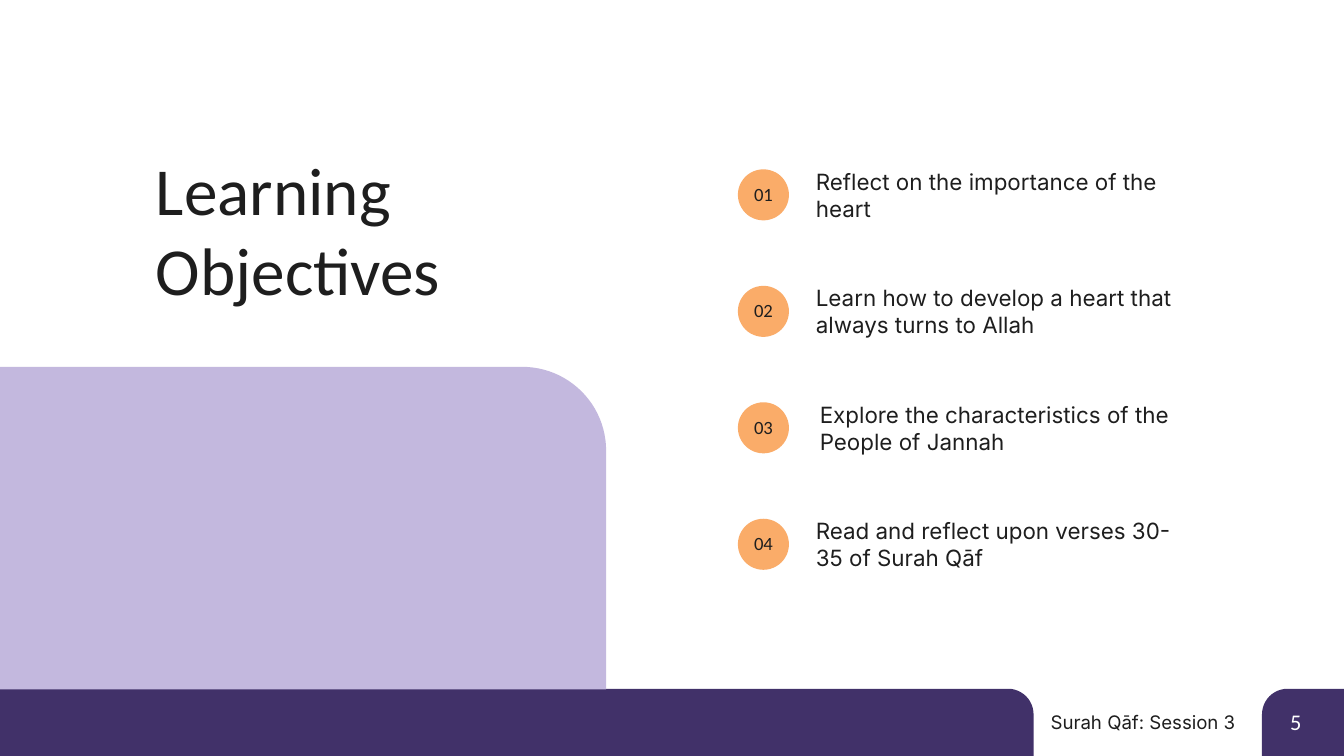
import pptx
import pptx.util
import pptx.dml.color
import pptx.enum.shapes
import pptx.enum.text

Inches = pptx.util.Inches
RGBColor = pptx.dml.color.RGBColor
MSO_SHAPE = pptx.enum.shapes.MSO_SHAPE
PP_ALIGN = pptx.enum.text.PP_ALIGN

# Content
TITLE = "Learning\nObjectives"
FOOTER = "Surah Qāf: Session 3"
PAGE_NUMBER = "5"
# Objective text, left, width
OBJECTIVES = [
    ("Reflect on the importance of the heart", 6.02, 2.85),
    ("Learn how to develop a heart that always turns to Allah", 6.02, 2.85),
    ("Explore the characteristics of the People of Jannah", 6.05, 2.8),
    ("Read and reflect upon verses 30-35 of Surah Qāf", 6.02, 2.85),
]

# Style
DARK_PURPLE = RGBColor(0x41, 0x31, 0x69)
LILAC = RGBColor(0xC3, 0xB8, 0xDE)
ORANGE = RGBColor(0xFA, 0xAC, 0x69)
INK = RGBColor(0x1E, 0x1E, 0x1E)
WHITE = RGBColor(0xFF, 0xFF, 0xFF)
HEADING_FONT = "Calibri"
BODY_FONT = "Inter"

# Layout: a 16:9 slide, with the footer bar along its bottom edge
SLIDE_WIDTH = 10
SLIDE_HEIGHT = SLIDE_WIDTH * 9 / 16
BAR_HEIGHT, BAR_ROUNDING = 0.5, 0.38
BAR_TOP = SLIDE_HEIGHT - BAR_HEIGHT
BADGE_LEFT, BADGE_SIZE = 5.49, 0.38
FIRST_BADGE_TOP, LAST_BADGE_TOP = 1.26, 3.86
ROW_PITCH = (LAST_BADGE_TOP - FIRST_BADGE_TOP) / (len(OBJECTIVES) - 1)


def add_filled_shape(slide, kind, box, color, rounding=None):
    shape = slide.shapes.add_shape(kind, *map(Inches, box))
    shape.shadow.inherit = False
    shape.fill.solid()
    shape.fill.fore_color.rgb = color
    shape.line.fill.background()
    if rounding is not None:
        shape.adjustments[0] = rounding
    return shape


def write_text(shape, text, size, font, color=INK, alignment=PP_ALIGN.LEFT):
    frame = shape.text_frame
    frame.text = text
    frame.word_wrap = True
    frame.auto_size = pptx.enum.text.MSO_AUTO_SIZE.NONE
    frame.vertical_anchor = pptx.enum.text.MSO_ANCHOR.TOP
    frame.margin_left = frame.margin_right = Inches(0.05)
    frame.margin_top = frame.margin_bottom = Inches(0.02)
    for paragraph in frame.paragraphs:
        paragraph.alignment = alignment
        paragraph.line_spacing = 1.0
        for run in paragraph.runs:
            run.font.size = pptx.util.Pt(size)
            run.font.name = font
            run.font.color.rgb = color


def add_text(slide, box, *text_style, **options):
    write_text(slide.shapes.add_textbox(*map(Inches, box)), *text_style, **options)


presentation = pptx.Presentation()
presentation.slide_width = Inches(SLIDE_WIDTH)
presentation.slide_height = Inches(SLIDE_HEIGHT)
slide = presentation.slides.add_slide(presentation.slide_layouts[5])

# Footer bars and lilac panel
corner = MSO_SHAPE.ROUND_1_RECTANGLE
page_tab = add_filled_shape(slide, corner, (9.39, BAR_TOP, 0.61, BAR_HEIGHT),
                            DARK_PURPLE, BAR_ROUNDING)
page_tab._element.spPr.xfrm.set("flipH", "1")
add_filled_shape(slide, corner, (0, BAR_TOP, 7.69, BAR_HEIGHT), DARK_PURPLE, BAR_ROUNDING)
add_filled_shape(slide, corner, (0, 2.73, 4.51, 2.4), LILAC, 0.26)
add_text(slide, (7.43, 5.27, 1.81, 0.22), FOOTER, 10, BODY_FONT, alignment=PP_ALIGN.RIGHT)
add_text(slide, (9.55, 5.25, 0.3, 0.25), PAGE_NUMBER, 12, HEADING_FONT, color=WHITE)

# Title
title = slide.shapes.title
title.left, title.top, title.width, title.height = map(Inches, (1.11, 1.08, 4.11, 1.26))
write_text(title, TITLE, 36, HEADING_FONT)

# Numbered objectives
for index, (objective, left, width) in enumerate(OBJECTIVES):
    top = FIRST_BADGE_TOP + index * ROW_PITCH
    add_filled_shape(slide, MSO_SHAPE.OVAL, (BADGE_LEFT, top, BADGE_SIZE, BADGE_SIZE), ORANGE)
    add_text(slide, (BADGE_LEFT, top + 0.08, BADGE_SIZE, 0.22), f"{index + 1:02d}",
             10, HEADING_FONT, alignment=PP_ALIGN.CENTER)
    add_text(slide, (left, top - 0.03, width, 0.45), objective, 12, BODY_FONT)

presentation.save("out.pptx")
